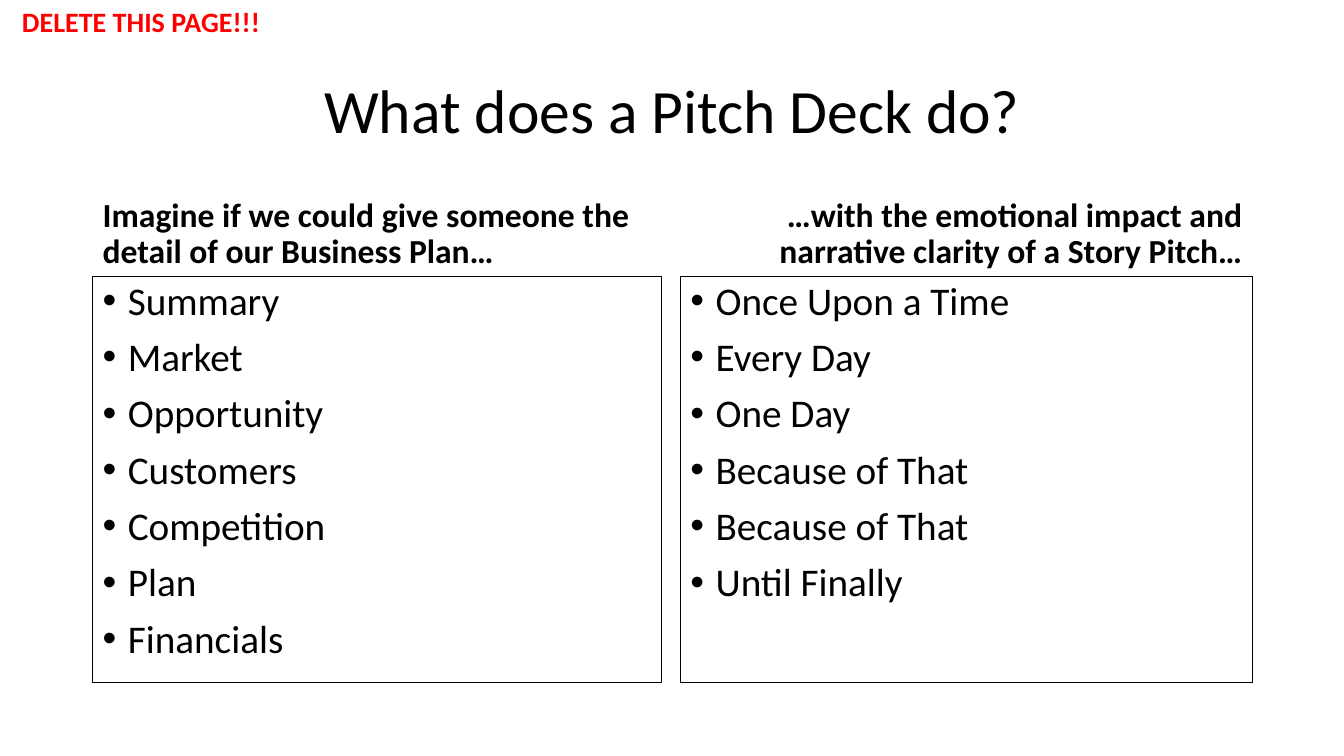
from lxml import etree
from pptx import Presentation
from pptx.dml.color import RGBColor
from pptx.enum.shapes import MSO_SHAPE
from pptx.enum.text import MSO_ANCHOR, MSO_AUTO_SIZE, PP_ALIGN
from pptx.oxml.ns import qn
from pptx.util import Inches, Pt

BLACK = RGBColor(0x00, 0x00, 0x00)
RED = RGBColor(0xFF, 0x00, 0x00)
FONT = "Calibri"
LEFT, CENTER, RIGHT = PP_ALIGN.LEFT, PP_ALIGN.CENTER, PP_ALIGN.RIGHT
TOP, MIDDLE, BOTTOM = MSO_ANCHOR.TOP, MSO_ANCHOR.MIDDLE, MSO_ANCHOR.BOTTOM
NO_AUTOFIT = MSO_AUTO_SIZE.NONE
GROW = MSO_AUTO_SIZE.SHAPE_TO_FIT_TEXT
RECTANGLE = MSO_SHAPE.RECTANGLE

TITLE_ONLY = 5
HEADING_HEIGHT = 0.9
BULLET_INDENT = 0.25

# left, top, width, height in inches
TITLE_BOX = (0.92, 0.4, 11.5, 1.45)
WARNING_BOX = (0.12, 0, 2.9, 0.44)
COLUMNS = [
    ((0.92, 1.84, 5.64, 4.93), LEFT,
     "Imagine if we could give someone the detail of our Business Plan…",
     ["Summary", "Market", "Opportunity", "Customers", "Competition",
      "Plan", "Financials"]),
    ((6.75, 1.84, 5.67, 4.93), RIGHT,
     "…with the emotional impact and narrative clarity of a Story Pitch…",
     ["Once Upon a Time", "Every Day", "One Day", "Because of That",
      "Because of That", "Until Finally"]),
]


def prepare_frame(frame, anchor):
    frame.word_wrap = True
    frame.auto_size = NO_AUTOFIT
    frame.vertical_anchor = anchor


def write(paragraph, text, size, color=BLACK, bold=False, align=LEFT):
    paragraph.alignment = align
    run = paragraph.add_run()
    run.text = text
    run.font.name = FONT
    run.font.size = Pt(size)
    run.font.bold = bold
    run.font.color.rgb = color


def space_body(paragraph):
    paragraph.line_spacing = 0.9
    paragraph.space_before = Pt(10)


def add_bullet(paragraph):
    properties = paragraph._p.get_or_add_pPr()
    properties.set("marL", str(Inches(BULLET_INDENT)))
    properties.set("indent", str(-Inches(BULLET_INDENT)))
    etree.SubElement(properties, qn("a:buFont")).set("typeface", "Arial")
    etree.SubElement(properties, qn("a:buChar")).set("char", "•")


def place_title(slide, box):
    title = slide.shapes.title
    title.left, title.top, title.width, title.height = map(Inches, box)
    prepare_frame(title.text_frame, MIDDLE)
    headline = title.text_frame.paragraphs[0]
    headline.line_spacing = 0.9
    write(headline, "What does a Pitch Deck do?", 44, align=CENTER)


def add_column(slide, box, align, heading_text, topics):
    """Place a heading above an outlined list of topics."""
    left, top, width, height = box
    heading = slide.shapes.add_textbox(
        *map(Inches, (left, top, width, HEADING_HEIGHT))).text_frame
    prepare_frame(heading, BOTTOM)
    space_body(heading.paragraphs[0])
    write(heading.paragraphs[0], heading_text, 24, bold=True, align=align)

    panel = slide.shapes.add_shape(RECTANGLE, *map(Inches, (
        left, top + HEADING_HEIGHT, width, height - HEADING_HEIGHT)))
    panel.shadow.inherit = False
    panel.fill.background()
    panel.line.color.rgb = BLACK
    panel.line.width = Pt(0.75)
    topic_list = panel.text_frame
    prepare_frame(topic_list, TOP)
    for index, topic in enumerate(topics):
        paragraph = topic_list.add_paragraph() if index else topic_list.paragraphs[0]
        space_body(paragraph)
        add_bullet(paragraph)
        write(paragraph, topic, 28)


def add_warning(slide, box):
    warning = slide.shapes.add_textbox(*map(Inches, box)).text_frame
    prepare_frame(warning, TOP)
    warning.auto_size = GROW
    write(warning.paragraphs[0], "DELETE THIS PAGE!!!", 20, RED, bold=True)


def main():
    deck = Presentation()
    deck.slide_width = Inches(13.33)
    deck.slide_height = Inches(7.5)
    slide = deck.slides.add_slide(deck.slide_layouts[TITLE_ONLY])
    place_title(slide, TITLE_BOX)
    for column in COLUMNS:
        add_column(slide, *column)
    add_warning(slide, WARNING_BOX)
    deck.save("out.pptx")


if __name__ == "__main__":
    main()
